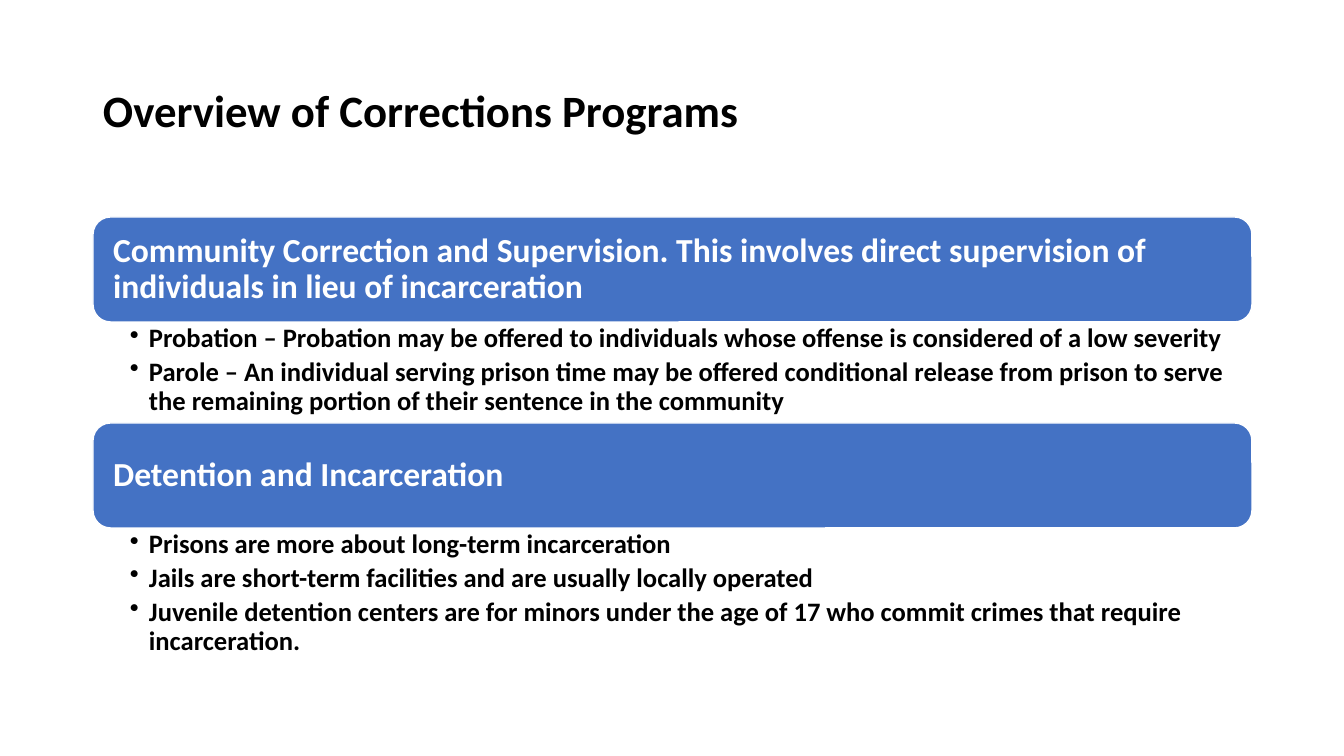
import pptx
import pptx.dml.color
import pptx.enum.shapes
import pptx.enum.text
import pptx.oxml.ns
import pptx.util
import lxml.etree

COLORS = {"banner": "4472C4", "white": "FFFFFF", "black": "000000"}
LEFT, WIDTH, BANNER_HEIGHT = 93, 1159, 105
SECTIONS = [
    (217, 102,
     "Community Correction and Supervision. This involves direct supervision of individuals in lieu of incarceration",
     ["Probation – Probation may be offered to individuals whose offense is considered of a low severity",
      "Parole – An individual serving prison time may be offered conditional release from prison to serve the remaining portion of their sentence in the community"]),
    (423, 137,
     "Detention and Incarceration",
     ["Prisons are more about long-term incarceration",
      "Jails are short-term facilities and are usually locally operated",
      "Juvenile detention centers are for minors under the age of 17 who commit crimes that require incarceration."]),
]


def px(n):
    return pptx.util.Emu(round(n * 914400 / 100.8))


def rgb(name):
    return pptx.dml.color.RGBColor.from_string(COLORS[name])


class Deck:
    font = "Calibri"

    def __init__(self, width, height):
        self.prs = pptx.Presentation()
        self.prs.slide_width, self.prs.slide_height = px(width), px(height)
        self.s = self.prs.slides.add_slide(self.prs.slide_layouts[6])

    def frame(self, sp, insets, middle=True):
        tf = sp.text_frame
        tf.word_wrap = True
        tf.margin_left, tf.margin_top, tf.margin_right, tf.margin_bottom = map(px, insets)
        anchor = pptx.enum.text.MSO_ANCHOR
        tf.vertical_anchor = anchor.MIDDLE if middle else anchor.TOP
        return tf

    def add_text(self, p, text, size, color):
        p.alignment = pptx.enum.text.PP_ALIGN.LEFT
        p.line_spacing = 0.9
        r = p.add_run()
        r.text = text
        r.font.name = self.font
        r.font.size = pptx.util.Pt(size)
        r.font.bold = True
        r.font.color.rgb = rgb(color)

    def title(self, x, y, w, h, text):
        sp = self.s.shapes.add_textbox(px(x), px(y), px(w), px(h))
        tf = self.frame(sp, (10, 5, 10, 5))
        self.add_text(tf.paragraphs[0], text, 32, "black")

    def banner(self, x, y, w, h, text):
        kind = pptx.enum.shapes.MSO_SHAPE.ROUNDED_RECTANGLE
        sp = self.s.shapes.add_shape(kind, px(x), px(y), px(w), px(h))
        sp.shadow.inherit = False
        sp.fill.solid()
        sp.fill.fore_color.rgb = rgb("banner")
        sp.line.color.rgb = rgb("white")
        sp.line.width = pptx.util.Pt(1)
        tf = self.frame(sp, (15, 15, 15, 15))
        self.add_text(tf.paragraphs[0], text, 24, "white")

    def bullets(self, x, y, w, h, items):
        sp = self.s.shapes.add_textbox(px(x), px(y), px(w), px(h))
        tf = self.frame(sp, (37, 3, 19, 3), middle=False)
        for i, item in enumerate(items):
            p = tf.add_paragraph() if i else tf.paragraphs[0]
            self.add_text(p, item, 19, "black")
            p.level = 1
            p.space_after = px(5)
            pPr = p._p.get_or_add_pPr()
            pPr.set("marL", str(px(19)))
            pPr.set("indent", str(-px(19)))
            bu = lxml.etree.SubElement(pPr, pptx.oxml.ns.qn("a:buChar"))
            bu.set("char", "•")


def main():
    deck = Deck(1344, 756)
    deck.title(LEFT, 40, WIDTH, 146, "Overview of Corrections Programs")
    for top, list_height, heading, items in SECTIONS:
        deck.banner(LEFT, top, WIDTH, BANNER_HEIGHT, heading)
        deck.bullets(LEFT, top + BANNER_HEIGHT, WIDTH, list_height, items)
    deck.prs.save("out.pptx")


if __name__ == "__main__":
    main()
